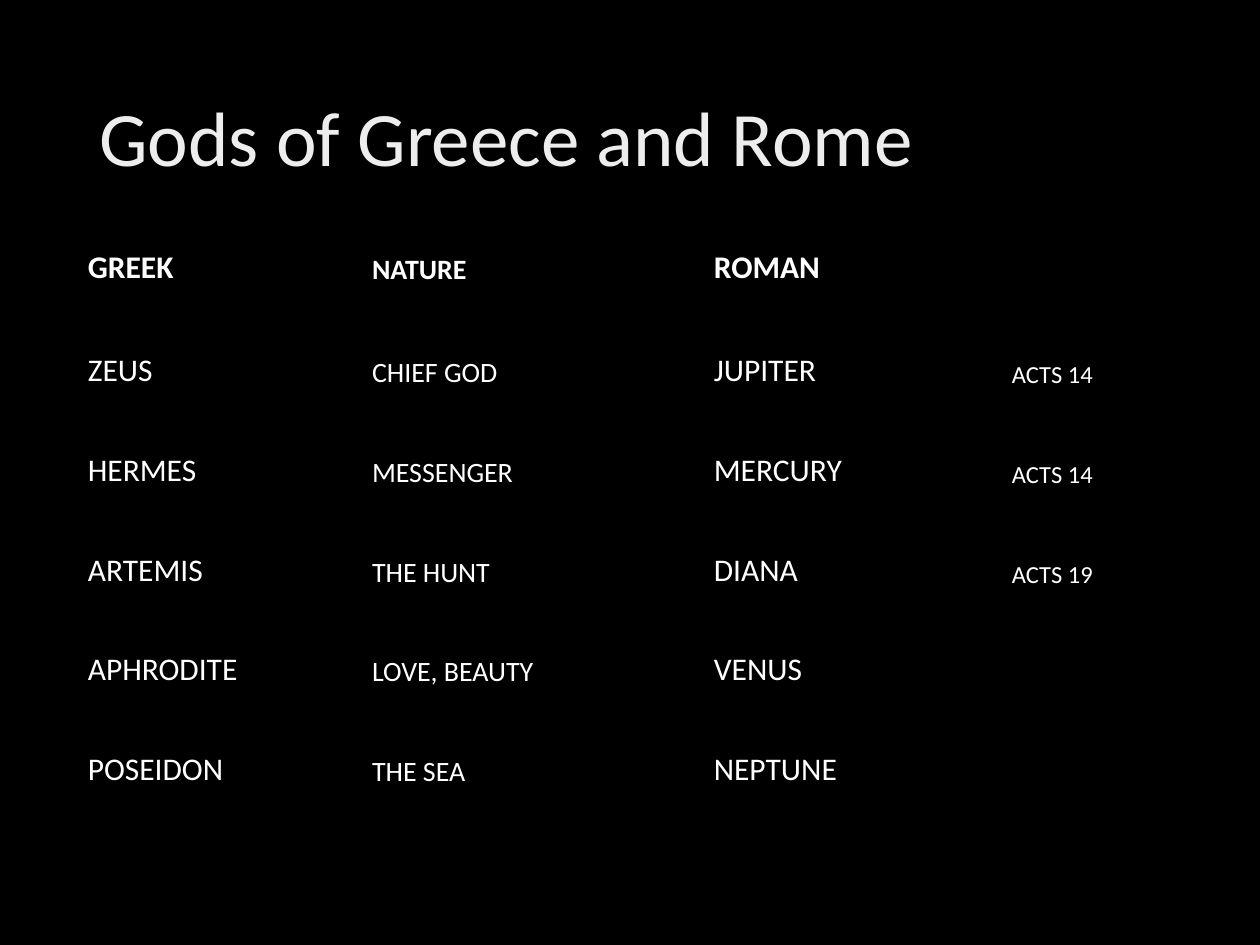
"""Build a slide with a table of Greek gods and their Roman counterparts."""
from dataclasses import dataclass

from lxml.etree import SubElement
from pptx import Presentation
from pptx.dml.color import RGBColor
from pptx.enum.text import MSO_VERTICAL_ANCHOR as Anchor
from pptx.oxml.ns import qn
from pptx.util import Cm, Pt

BLACK = RGBColor(0x00, 0x00, 0x00)
WHITE = RGBColor(0xFF, 0xFF, 0xFF)
SILVER = RGBColor(0xED, 0xED, 0xED)
FONT = "Calibri"
NO_STYLE_NO_GRID = "{2D5ABB26-0587-4C30-8999-92F81FD0307C}"
LEFT, WIDTH = Cm(1.75), Cm(21.9)


@dataclass(frozen=True)
class Column:
    width: float
    size: int


@dataclass(frozen=True)
class God:
    greek: str
    nature: str
    roman: str
    passage: str = ""

    def texts(self) -> tuple[str, ...]:
        return self.greek, self.nature, self.roman, self.passage


COLUMNS = [Column(5.73, 18), Column(6.89, 16), Column(6.01, 18), Column(3.27, 14)]
ROW_HEIGHTS = [2.08] * 2 + [2.01] * 4
HEADER = God("GREEK", "NATURE", "ROMAN")
GODS = [
    God("ZEUS", "CHIEF GOD", "JUPITER", "ACTS 14"),
    God("HERMES", "MESSENGER", "MERCURY", "ACTS 14"),
    God("ARTEMIS", "THE HUNT", "DIANA", "ACTS 19"),
    God("APHRODITE", "LOVE, BEAUTY", "VENUS"),
    God("POSEIDON", "THE SEA", "NEPTUNE"),
]


def add_text(paragraph, text: str, size: int, color: RGBColor, bold: bool = False) -> None:
    run = paragraph.add_run()
    run.text = text
    run.font.name = FONT
    run.font.size = Pt(size)
    run.font.bold = bold
    run.font.color.rgb = color


def add_title(slide, text: str) -> None:
    frame = slide.shapes.add_textbox(LEFT, Cm(1.01), WIDTH, Cm(3.68)).text_frame
    frame.word_wrap = True
    frame.vertical_anchor = Anchor.MIDDLE
    paragraph = frame.paragraphs[0]
    paragraph.line_spacing = 0.9
    add_text(paragraph, text, 44, SILVER)


def add_bottom_border(cell, color: RGBColor, width: float) -> None:
    properties = cell._tc.get_or_add_tcPr()
    line = SubElement(properties, qn("a:lnB"), w=str(Pt(width)))
    fill = SubElement(line, qn("a:solidFill"))
    SubElement(fill, qn("a:srgbClr"), val=str(color))


def fill_cell(cell, text: str, size: int, is_header: bool) -> None:
    if is_header:
        add_bottom_border(cell, BLACK, 2)
    cell.fill.background()
    cell.vertical_anchor = Anchor.BOTTOM
    cell.margin_left = cell.margin_top = cell.margin_right = Cm(0.02)
    cell.margin_bottom = Cm(0)
    if text:
        add_text(cell.text_frame.paragraphs[0], text, size, WHITE, is_header)


def add_gods_table(slide, rows: list[God]) -> None:
    shape = slide.shapes.add_table(
        len(rows), len(COLUMNS), LEFT, Cm(3.71), WIDTH, Cm(sum(ROW_HEIGHTS))
    )
    table = shape.table
    table.horz_banding = False
    table._tbl.tblPr.find(qn("a:tableStyleId")).text = NO_STYLE_NO_GRID
    for table_column, column in zip(table.columns, COLUMNS):
        table_column.width = Cm(column.width)
    for index, (god, height) in enumerate(zip(rows, ROW_HEIGHTS)):
        row = table.rows[index]
        row.height = Cm(height)
        for cell, text, column in zip(row.cells, god.texts(), COLUMNS):
            fill_cell(cell, text, column.size, index == 0)


def main() -> None:
    presentation = Presentation()
    presentation.slide_width, presentation.slide_height = Cm(25.4), Cm(19.05)
    slide = presentation.slides.add_slide(presentation.slide_layouts[6])
    slide.background.fill.solid()
    slide.background.fill.fore_color.rgb = BLACK
    add_title(slide, "Gods of Greece and Rome")
    add_gods_table(slide, [HEADER, *GODS])
    presentation.save("out.pptx")


if __name__ == "__main__":
    main()
